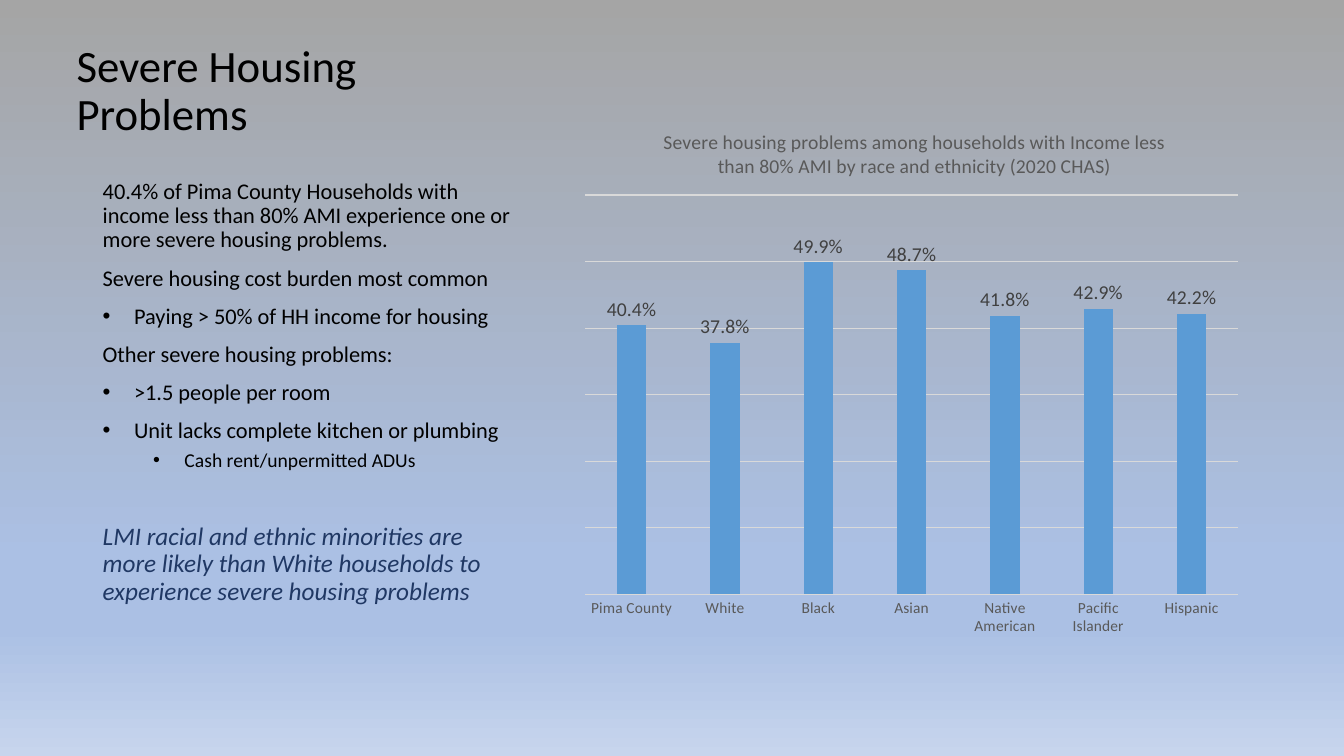
from dataclasses import dataclass, field
from typing import Any

from lxml import etree
from pptx import Presentation
from pptx import util as u
from pptx.chart.data import CategoryChartData
from pptx.dml.color import RGBColor
from pptx.enum import chart as charts, text
from pptx.oxml import parse_xml
from pptx.oxml.ns import nsdecls, qn

FONT = "Calibri"
COLORS = {
    "text": "000000", "callout": "203864",
    "grid": "D9D9D9", "axis": "595959", "label": "404040",
    "Series 1": "4472C4", "Series 2": "ED7D31", "Series 3": "A5A5A5",
    "Series 4": "FFC000", "Series 5": "5B9BD5",
}
BACKDROP = ((0, "A5A5A5"), (74, "ABC0E4"), (83, "ABC0E4"), (100, "C7D5ED"))
BULLET_INDENT = 0.79
CHART_TITLE = ("Severe housing problems among households with Income less "
               "than 80% AMI by race and ethnicity (2020 CHAS)")
RATES = {
    "Pima County": 0.404, "White": 0.378, "Black": 0.499, "Asian": 0.487,
    "Native American": 0.418, "Pacific Islander": 0.429, "Hispanic": 0.422,
}
SERIES = {f"Series {number}": [] for number in range(1, 5)}
SERIES["Series 5"] = list(RATES.values())


@dataclass
class Line:
    words: str
    size: float = 16
    before: float = 10
    indent: float | None = None
    color: str = "text"
    italic: bool = False


@dataclass
class Block:
    left: float
    top: float
    width: float
    height: float
    lines: list[Line] = field(default_factory=list)
    anchor: Any = text.MSO_ANCHOR.TOP


BLOCKS = (
    Block(1.68, 1.27, 12.07, 2.39, [Line("Severe Housing Problems", 32, 0)],
          text.MSO_ANCHOR.BOTTOM),
    Block(2.34, 4.42, 10.92, 11.89, [
        Line("40.4% of Pima County Households with income less than 80% AMI "
             "experience one or more severe housing problems."),
        Line("Severe housing cost burden most common"),
        Line("Paying > 50% of HH income for housing", indent=BULLET_INDENT),
        Line("Other severe housing problems:"),
        Line(">1.5 people per room", indent=BULLET_INDENT),
        Line("Unit lacks complete kitchen or plumbing", indent=BULLET_INDENT),
        Line("Cash rent/unpermitted ADUs", 14, 5, indent=2.06),
        Line("LMI racial and ethnic minorities are more likely than White "
             "households to experience severe housing problems",
             18, 37.2, color="callout", italic=True),
    ]),
)
CHART_AREA = Block(14.4, 2.74, 17.15, 13.6)


def apply(target: Any, values: dict[str, Any]) -> None:
    for name, value in values.items():
        setattr(target, name, value)


def style_font(font: Any, size: float, color: str, italic: bool = False) -> None:
    apply(font, {"name": FONT, "size": u.Pt(size), "bold": False, "italic": italic})
    font.color.rgb = RGBColor.from_string(COLORS[color])


def frame(block: Block) -> tuple[u.Length, ...]:
    return tuple(u.Cm(n) for n in (block.left, block.top, block.width, block.height))


def paint_background(page: Any) -> None:
    fill = page.background.fill
    fill.gradient()
    fill.gradient_angle = 270
    stops = page._element.find(".//" + qn("a:gsLst"))
    for stop in list(stops):
        stops.remove(stop)
    for percent, color in BACKDROP:
        stop = etree.SubElement(stops, qn("a:gs"), pos=str(percent * 1000))
        etree.SubElement(stop, qn("a:srgbClr"), val=color)


def add_bullet(para: Any, indent: float) -> None:
    props = para._p.get_or_add_pPr()
    props.set("marL", str(u.Cm(indent)))
    props.set("indent", str(-u.Cm(BULLET_INDENT)))
    etree.SubElement(props, qn("a:buFont"), typeface="Arial")
    etree.SubElement(props, qn("a:buChar"), char="•")


def add_block(page: Any, block: Block) -> None:
    box = page.shapes.add_textbox(*frame(block)).text_frame
    apply(box, {"word_wrap": True, "vertical_anchor": block.anchor})
    for number, line in enumerate(block.lines):
        para = box.add_paragraph() if number else box.paragraphs[0]
        apply(para, {"line_spacing": 0.9, "space_before": u.Pt(line.before)})
        if line.indent is not None:
            add_bullet(para, line.indent)
        span = para.add_run()
        span.text = line.words
        style_font(span.font, line.size, line.color, line.italic)


def place(parent: Any, following: str, **shares: float) -> None:
    for old in parent.findall(qn("c:layout")):
        parent.remove(old)
    target = '<c:layoutTarget val="inner"/>' if "w" in shares else ""
    modes = "".join(f'<c:{side}Mode val="edge"/>' for side in "xy")
    values = "".join(f'<c:{side} val="{share}"/>' for side, share in shares.items())
    layout = parse_xml(f'<c:layout {nsdecls("c")}><c:manualLayout>{target}{modes}'
                       f'{values}</c:manualLayout></c:layout>')
    parent.find(qn(following)).addprevious(layout)


def grid_line(line: Any) -> None:
    line.width = u.Pt(0.75)
    line.color.rgb = RGBColor.from_string(COLORS["grid"])


def add_rates_chart(page: Any) -> None:
    data = CategoryChartData(number_format="0.0%")
    data.categories = list(RATES)
    for name, rates in SERIES.items():
        data.add_series(name, rates)
    chart = page.shapes.add_chart(
        charts.XL_CHART_TYPE.COLUMN_CLUSTERED, *frame(CHART_AREA), data).chart
    style_font(chart.font, 10, "text")
    apply(chart, {"has_legend": False, "has_title": True})

    para = chart.chart_title.text_frame.paragraphs[0]
    span = para.add_run()
    span.text = CHART_TITLE
    style_font(span.font, 14, "axis")
    chart.chart_title.include_in_layout = False
    place(chart.chart_title._element, "c:overlay", x=0.13, y=0.03)

    plot = chart.plots[0]
    apply(plot, {"gap_width": 219, "overlap": -27,
                 "vary_by_categories": False, "has_data_labels": True})
    place(plot._element.getparent(), "c:barChart", x=0.02, y=0.16, w=0.96, h=0.74)
    apply(plot.data_labels, {
        "show_value": True, "number_format": "0.0%", "number_format_is_linked": False,
        "position": charts.XL_LABEL_POSITION.OUTSIDE_END})
    style_font(plot.data_labels.font, 14, "label")
    for series in plot.series:
        bars = series.format.fill
        bars.solid()
        bars.fore_color.rgb = RGBColor.from_string(COLORS[series.name])

    apply(chart.value_axis, {"minimum_scale": 0, "maximum_scale": 0.6, "major_unit": 0.1,
                             "has_major_gridlines": True, "visible": False})
    grid_line(chart.value_axis.major_gridlines.format.line)
    chart.category_axis.major_tick_mark = charts.XL_TICK_MARK.NONE
    style_font(chart.category_axis.tick_labels.font, 11, "axis")
    grid_line(chart.category_axis.format.line)


def main() -> None:
    deck = Presentation()
    apply(deck, {"slide_width": u.Cm(33.87), "slide_height": u.Cm(19.05)})
    page = deck.slides.add_slide(deck.slide_layouts[6])
    paint_background(page)
    for block in BLOCKS:
        add_block(page, block)
    add_rates_chart(page)
    deck.save("out.pptx")


if __name__ == "__main__":
    main()
